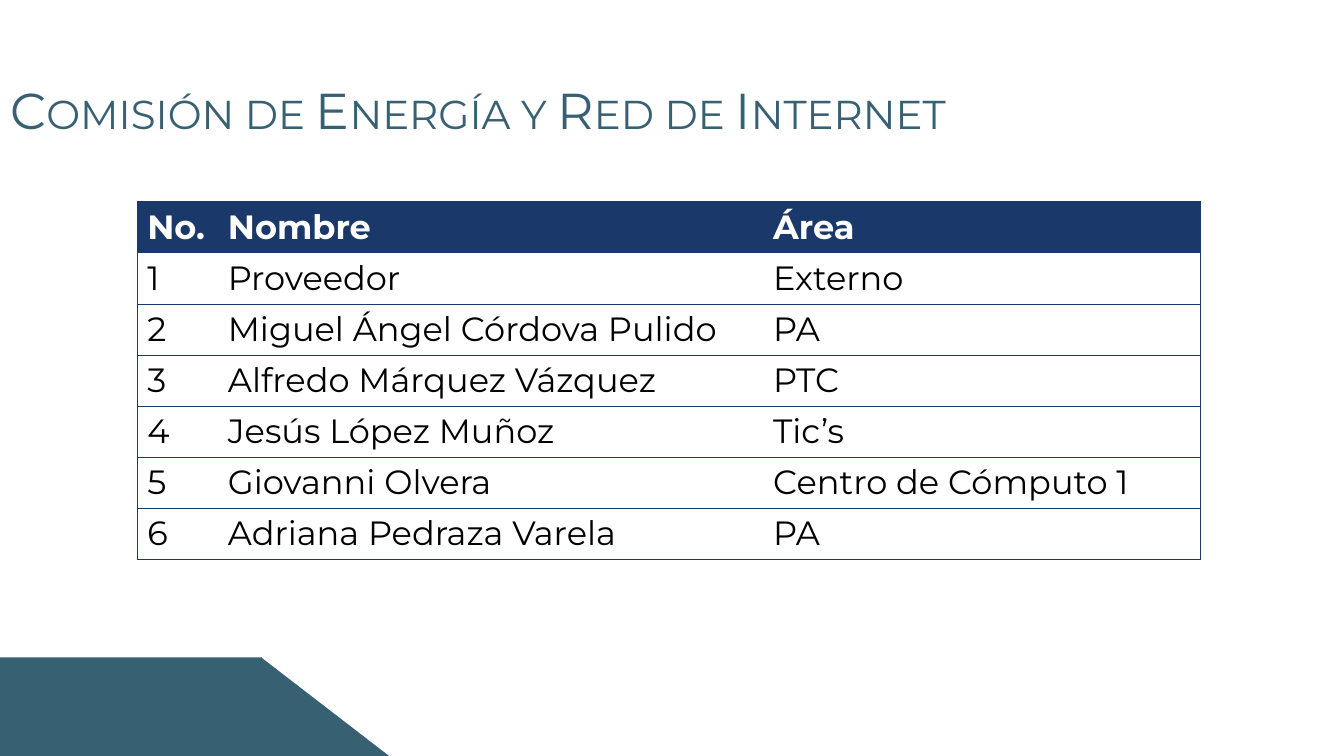
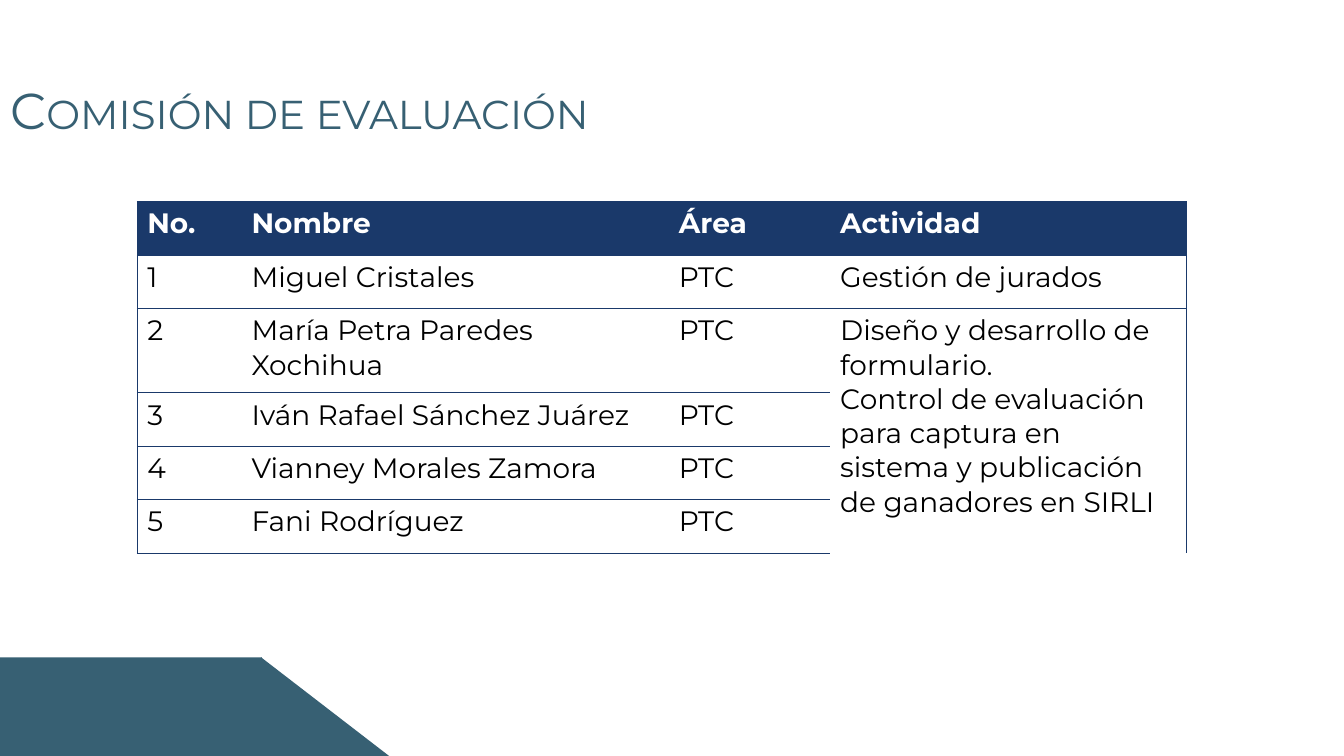
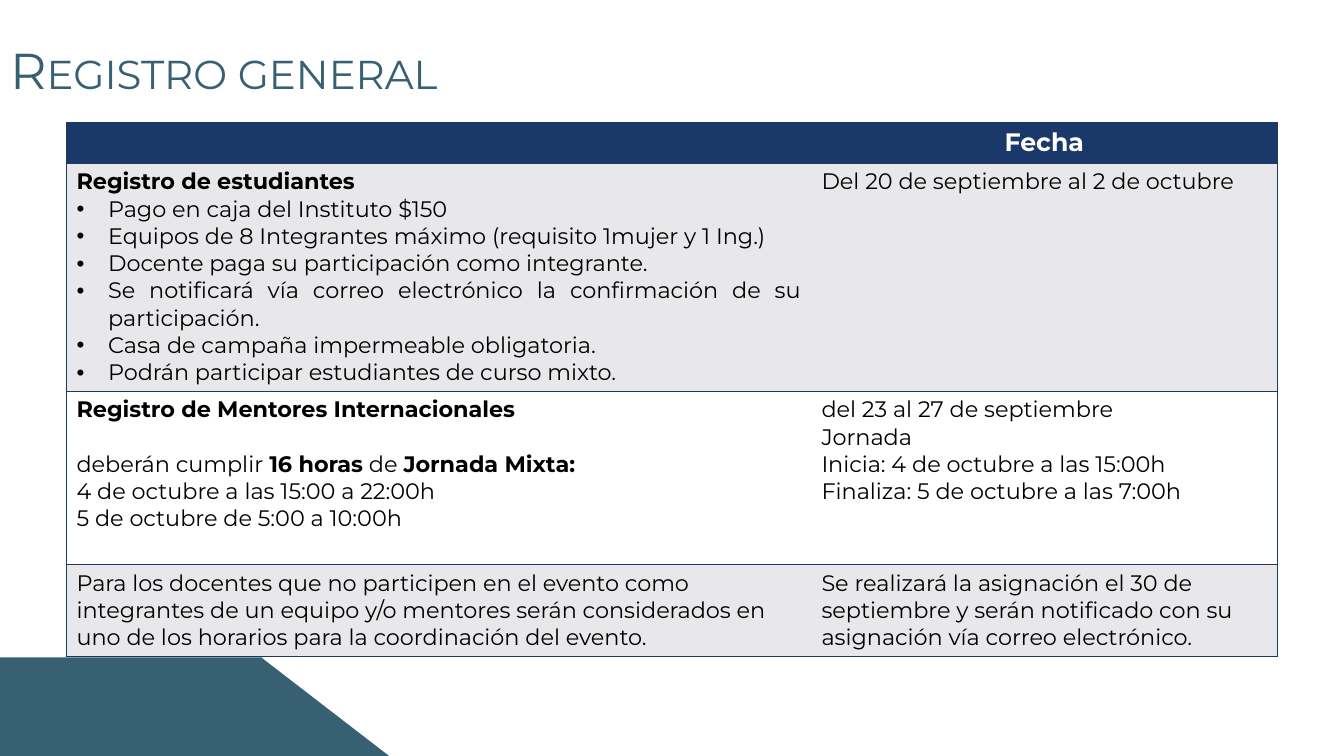
from lxml.etree import SubElement
from pptx import Presentation
from pptx.dml.color import RGBColor
from pptx.enum.shapes import MSO_SHAPE
from pptx.enum.text import MSO_ANCHOR, PP_ALIGN
from pptx.oxml.ns import qn
from pptx.util import Pt

COLORS = {"teal": "376073", "navy": "1A396A", "grey": "E8E8EB", "white": "FFFFFF", "black": "000000"}
FONT = "Montserrat"
PLAIN_TABLE_STYLE = "{2D5ABB26-0587-4C30-8999-92F81FD0307C}"
LEFT, CENTER, JUSTIFY = PP_ALIGN.LEFT, PP_ALIGN.CENTER, PP_ALIGN.JUSTIFY

# A list in a cell holds its paragraphs; "• " starts a bullet and ** encloses bold text.
SLIDES = [
    {
        "title": "Comisión de Energía y Red de Internet", "title_top": 28.8,
        "left": 98, "top": 144, "columns": [57.6, 389.5, 312.5], "heights": [36.5] * 7,
        "sizes": (24, 24), "line": 0.5, "fills": ["navy"] + [None] * 6, "aligns": [LEFT] * 7,
        "rows": [
            ["No.", "Nombre", "Área"],
            ["1", "Proveedor", "Externo"],
            ["2", "Miguel Ángel Córdova Pulido", "PA"],
            ["3", "Alfredo Márquez Vázquez", "PTC"],
            ["4", "Jesús López Muñoz", "Tic’s"],
            ["5", "Giovanni Olvera", "Centro de Cómputo 1"],
            ["6", "Adriana Pedraza Varela", "PA"],
        ],
    },
    {
        "title": "Comisión de evaluación", "title_top": 28.8,
        "left": 98, "top": 144, "columns": [74.5, 305.3, 115.2, 254.5],
        "heights": [38.2, 38.2, 60.2, 38.2, 38.2, 38.2],
        "sizes": (20, 20), "line": 0.5, "fills": ["navy"] + [None] * 5, "aligns": [LEFT] * 6,
        "merge": ((2, 3), (5, 3)),
        "rows": [
            ["No.", "Nombre", "Área", "Actividad"],
            ["1", "Miguel Cristales", "PTC", "Gestión de jurados"],
            ["2", "María Petra Paredes Xochihua", "PTC", [
                "Diseño y desarrollo de formulario.",
                "Control de evaluación para captura en sistema y publicación de ganadores en SIRLI",
            ]],
            ["3", "Iván Rafael Sánchez Juárez", "PTC"],
            ["4", "Vianney Morales Zamora", "PTC"],
            ["5", "Fani Rodríguez", "PTC"],
        ],
    },
    {
        "title": "Registro general", "title_top": 0,
        "left": 47.5, "top": 87.3, "columns": [532.1, 332.7], "heights": [29.3, 162.9, 123.9, 65.7],
        "sizes": (18, 16), "line": 1, "fills": ["navy", "grey", "white", "grey"],
        "aligns": [CENTER, JUSTIFY, JUSTIFY, LEFT],
        "rows": [
            ["", "Fecha"],
            [[
                "**Registro de estudiantes**",
                "• Pago en caja del Instituto $150",
                "• Equipos de 8 Integrantes máximo (requisito 1mujer y 1 Ing.)",
                "• Docente paga su participación como integrante.",
                "• Se notificará vía correo electrónico la confirmación de su participación.",
                "• Casa de campaña impermeable obligatoria.",
                "• Podrán participar estudiantes de curso mixto.",
            ], "Del 20 de septiembre al 2 de octubre"],
            [[
                "**Registro de Mentores Internacionales**",
                "deberán cumplir **16 horas** de **Jornada Mixta:**",
                "4 de octubre a las 15:00 a 22:00h",
                "5 de octubre de 5:00 a 10:00h",
            ], [
                "del 23 al 27 de septiembre",
                "Jornada",
                "Inicia: 4 de octubre a las 15:00h",
                "Finaliza: 5 de octubre a las 7:00h",
            ]],
            [
                "Para los docentes que no participen en el evento como integrantes de un equipo y/o "
                "mentores serán considerados en uno de los horarios para la coordinación del evento.",
                "Se realizará la asignación el 30 de septiembre y serán notificado con su asignación "
                "vía correo electrónico.",
            ],
        ],
    },
]


def draw_borders(cell, sides, width):
    """Draw navy lines on the given sides; call before setting the cell's fill."""
    properties = cell._tc.get_or_add_tcPr()
    for side in "LRTB":
        if side in sides:
            line = SubElement(properties, qn(f"a:ln{side}"), w=str(Pt(width)))
            fill = SubElement(line, qn("a:solidFill"))
            SubElement(fill, qn("a:srgbClr"), val=COLORS["navy"])


def write_paragraph(para, text, size, color, bold, align):
    if text.startswith("• "):
        text = text[2:]
        properties = para._p.get_or_add_pPr()
        properties.set("marL", str(Pt(22.5)))
        properties.set("indent", str(-Pt(22.5)))
        SubElement(properties, qn("a:buFont"), typeface="Arial")
        SubElement(properties, qn("a:buChar"), char="•")
    para.alignment = align
    para.font.name = FONT
    para.font.size = Pt(size)
    para.font.bold = bold
    para.font.color.rgb = RGBColor.from_string(COLORS[color])
    for index, piece in enumerate(text.split("**")):
        if piece:
            span = para.add_run()
            span.text = piece
            if index % 2:
                span.font.bold = True


deck = Presentation()
deck.slide_width, deck.slide_height = Pt(960), Pt(540)
layout = deck.slide_layouts[5]
for placeholder in list(layout.placeholders)[1:]:
    placeholder.element.getparent().remove(placeholder.element)
pages = [deck.slides.add_slide(layout) for _ in SLIDES]

# The corner band is drawn once and moved to the layout that all pages share.
band = pages[0].shapes.add_group_shape()
for preset, left, width in [(MSO_SHAPE.RECTANGLE, 0, 187.2), (MSO_SHAPE.RIGHT_TRIANGLE, 186.5, 91.5)]:
    part = band.shapes.add_shape(preset, Pt(left), Pt(469.5), Pt(width), Pt(70.5))
    part.shadow.inherit = False
    part.fill.solid()
    part.fill.fore_color.rgb = RGBColor.from_string(COLORS["teal"])
    part.line.fill.background()
layout.placeholders[0].element.addprevious(band.element)

for page, content in zip(pages, SLIDES):
    title = page.shapes.title
    title.left, title.top = Pt(0), Pt(content["title_top"])
    title.width, title.height = Pt(894), Pt(104.4)
    title.text_frame.vertical_anchor = MSO_ANCHOR.MIDDLE
    heading = title.text_frame.paragraphs[0]
    heading.line_spacing = 0.9
    write_paragraph(heading, content["title"], 36, "teal", False, LEFT)
    heading.runs[0]._r.get_or_add_rPr().set("cap", "small")

    columns, heights = content["columns"], content["heights"]
    frame = page.shapes.add_table(len(heights), len(columns), Pt(content["left"]), Pt(content["top"]),
                                  Pt(sum(columns)), Pt(sum(heights)))
    table = frame.table
    frame.element.find(".//" + qn("a:tableStyleId")).text = PLAIN_TABLE_STYLE
    table.horz_banding = False
    for column, width in zip(table.columns, columns):
        column.width = Pt(width)
    for row, height in zip(table.rows, heights):
        row.height = Pt(height)
    if "merge" in content:
        first, last = content["merge"]
        table.cell(*first).merge(table.cell(*last))

    for row_index, texts in enumerate(content["rows"]):
        header = row_index == 0
        fill = content["fills"][row_index]
        for column_index in range(len(columns)):
            cell = table.cell(row_index, column_index)
            sides = "" if cell.is_spanned else "T"
            sides += "B" if row_index == len(heights) - 1 else ""
            sides += "L" if column_index == 0 else ""
            sides += "R" if column_index == len(columns) - 1 else ""
            draw_borders(cell, sides, content["line"])
            if fill:
                cell.fill.solid()
                cell.fill.fore_color.rgb = RGBColor.from_string(COLORS[fill])
            else:
                cell.fill.background()
            if cell.is_spanned:
                continue
            text = texts[column_index]
            for index, line in enumerate([text] if isinstance(text, str) else text):
                para = cell.text_frame.add_paragraph() if index else cell.text_frame.paragraphs[0]
                write_paragraph(para, line, content["sizes"][0 if header else 1],
                                "white" if header else "black", header, content["aligns"][row_index])

# The mentors' hours on the last page stand one line below their heading.
table.cell(2, 0).text_frame.paragraphs[1].space_before = Pt(19.5)

deck.save("out.pptx")
